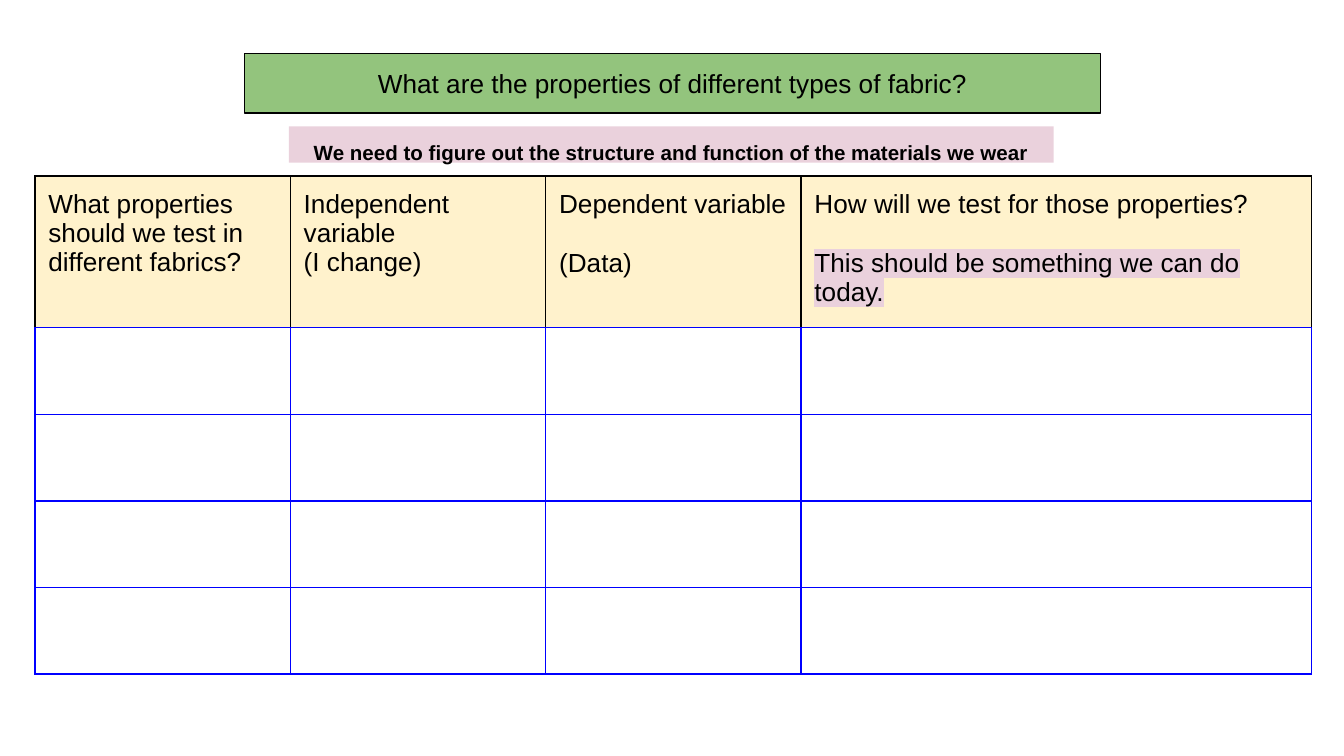
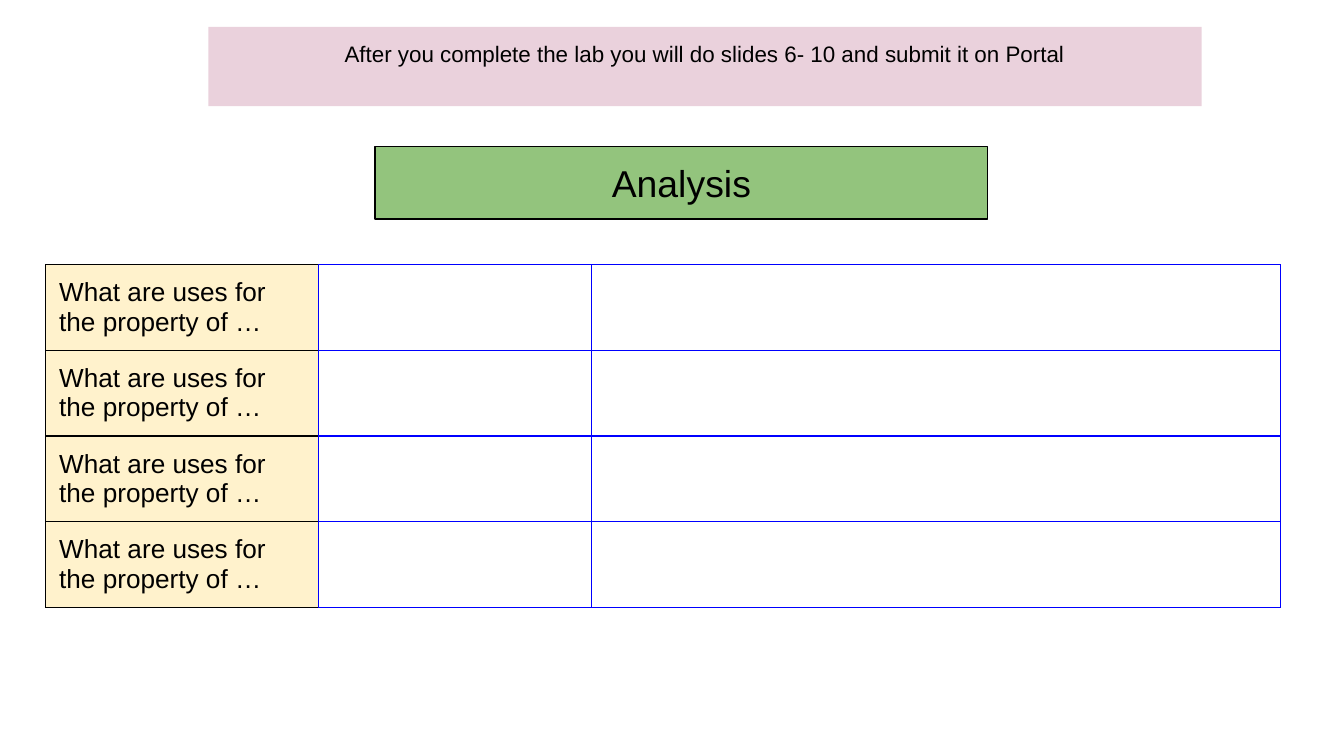
from dataclasses import dataclass

from lxml.etree import SubElement
from pptx import Presentation
from pptx.dml.color import RGBColor
from pptx.enum.shapes import MSO_SHAPE
from pptx.enum.text import MSO_ANCHOR, MSO_AUTO_SIZE, PP_ALIGN
from pptx.oxml.ns import qn
from pptx.util import Inches, Pt

RECT = MSO_SHAPE.RECTANGLE
TOP, MIDDLE = MSO_ANCHOR.TOP, MSO_ANCHOR.MIDDLE
FIXED = MSO_AUTO_SIZE.NONE
CENTER, LEFT = PP_ALIGN.CENTER, PP_ALIGN.LEFT
TITLE_ONLY = 5

# Square grid: 100 columns across the slide, 56.25 rows down
WIDE, HIGH = Inches(10), Inches(5.625)
UNIT = WIDE / 100


@dataclass(frozen=True)
class Theme:
    font: str = "Arial"
    ink: str = "000000"
    edge: str = "0000FF"
    green: str = "93C47D"
    pink: str = "EAD1DC"
    cream: str = "FFF2CC"
    line: float = 0.75
    inset: float = 1
    cell: float = 14
    gap: float = 16
    ask: float = 14
    head: float = 20
    need: float = 11
    note: float = 12


THEME = Theme()


@dataclass(frozen=True)
class Box:
    left: float
    top: float
    width: float
    height: float


@dataclass(frozen=True)
class Line:
    text: str
    gap: float = 0
    mark: bool = False


@dataclass(frozen=True)
class Band:
    box: Box
    text: str
    size: float
    bold: bool = False


@dataclass(frozen=True)
class Label:
    """A filled cell; blue names its one side that meets the blank cells."""
    lines: tuple[Line, ...]
    blue: str


@dataclass(frozen=True)
class Chart:
    left: float
    top: float
    cols: tuple[float, ...]
    rows: tuple[float, ...]
    labels: dict[tuple[int, int], Label]
    span: int = 0  # first column of the merged end of each row


@dataclass(frozen=True)
class Page:
    title: Band
    note: Band
    chart: Chart


def grid(count: float) -> int:
    return round(count * UNIT)


def tint(code: str) -> RGBColor:
    return RGBColor.from_string(code)


# Text
def add_run(para, text: str, size: float, bold: bool = False,
            mark: bool = False) -> None:
    run = para.add_run()
    run.text = text
    font = run.font
    font.size, font.bold, font.name = Pt(size), bold, THEME.font
    font.color.rgb = tint(THEME.ink)
    if mark:
        props = font._element
        light = SubElement(props, qn("a:highlight"))
        SubElement(light, qn("a:srgbClr"), val=THEME.pink)
        props.find(qn("a:solidFill")).addnext(light)


def pad(part) -> None:
    part.margin_left = part.margin_right = grid(THEME.inset)
    part.margin_top = part.margin_bottom = grid(THEME.inset)


# Bands
def fill_band(shape, band: Band, color: str, anchor: MSO_ANCHOR) -> None:
    box = band.box
    shape.left, shape.top = grid(box.left), grid(box.top)
    shape.width, shape.height = grid(box.width), grid(box.height)
    shape.fill.solid()
    shape.fill.fore_color.rgb = tint(color)
    frame = shape.text_frame
    pad(frame)
    frame.word_wrap = True
    frame.auto_size = FIXED
    frame.vertical_anchor = anchor
    para = frame.paragraphs[0]
    para.alignment = CENTER
    add_run(para, band.text, band.size, band.bold)


def add_title(slide, band: Band) -> None:
    shape = slide.shapes.title
    fill_band(shape, band, THEME.green, MIDDLE)
    shape.line.color.rgb = tint(THEME.ink)
    shape.line.width = Pt(THEME.line)


def add_note(slide, band: Band) -> None:
    shape = slide.shapes.add_shape(RECT, 0, 0, grid(1), grid(1))
    shape.shadow.inherit = False
    shape.line.fill.background()
    fill_band(shape, band, THEME.pink, TOP)


# Tables
def set_edges(cell, label: Label | None) -> None:
    props = cell._tc.get_or_add_tcPr()
    for side in "LRTB":
        blue = label is None or side == label.blue
        edge = SubElement(props, qn(f"a:ln{side}"), w=str(Pt(THEME.line)))
        fill = SubElement(edge, qn("a:solidFill"))
        SubElement(fill, qn("a:srgbClr"), val=THEME.edge if blue else THEME.ink)


def fill_cell(cell, label: Label | None) -> None:
    pad(cell)
    set_edges(cell, label)
    if label is None:
        cell.fill.background()
        return
    cell.fill.solid()
    cell.fill.fore_color.rgb = tint(THEME.cream)
    frame = cell.text_frame
    for num, line in enumerate(label.lines):
        para = frame.add_paragraph() if num else frame.paragraphs[0]
        para.alignment = LEFT
        para.space_before = Pt(line.gap)
        add_run(para, line.text, THEME.cell, mark=line.mark)


def add_chart(slide, chart: Chart) -> None:
    table = slide.shapes.add_table(
        len(chart.rows), len(chart.cols), grid(chart.left), grid(chart.top),
        grid(sum(chart.cols)), grid(sum(chart.rows))).table
    table.first_row = table.horz_banding = False
    for col, width in zip(table.columns, chart.cols):
        col.width = grid(width)
    for y, height in enumerate(chart.rows):
        table.rows[y].height = grid(height)
        for x in range(len(chart.cols)):
            fill_cell(table.cell(y, x), chart.labels.get((y, x)))
        if chart.span:
            end = table.cell(y, len(chart.cols) - 1)
            table.cell(y, chart.span).merge(end)


# Content
HEADS = (
    (Line("What properties should we test in different fabrics?"),),
    (Line("Independent variable"), Line("(I change)")),
    (Line("Dependent variable"), Line("(Data)", THEME.gap)),
    (Line("How will we test for those properties?"),
     Line("This should be something we can do today.", THEME.gap, True)),
)
USES = Label((Line("What are uses for the property of …"),), "R")

# Rows of the second table grow to fit their two lines of text
PAGES = (
    Page(
        Band(Box(18.2, 4, 63.7, 4.4),
             "What are the properties of different types of fabric?",
             THEME.ask),
        Band(Box(21.5, 9.4, 56.9, 2.7),
             "We need to figure out the structure and function of the "
             "materials we wear", THEME.need, True),
        Chart(2.6, 13.1, (19,) * 5, (11.3,) + (6.44,) * 4,
              {(0, x): Label(head, "B") for x, head in enumerate(HEADS)}, 3),
    ),
    Page(
        Band(Box(27.9, 10.9, 45.6, 5.4), "Analysis", THEME.head),
        Band(Box(15.5, 2, 73.9, 5.9),
             "After you complete the lab you will do slides 6- 10 and "
             "submit it on Portal", THEME.note),
        Chart(3.4, 19.7, (20.3, 20.3, 51.3), (4.2,) * 4,
              {(y, 0): USES for y in range(4)}),
    ),
)


def main() -> None:
    deck = Presentation()
    deck.slide_width, deck.slide_height = WIDE, HIGH
    for page in PAGES:
        slide = deck.slides.add_slide(deck.slide_layouts[TITLE_ONLY])
        add_title(slide, page.title)
        add_chart(slide, page.chart)
        add_note(slide, page.note)
    deck.save("out.pptx")


if __name__ == "__main__":
    main()
